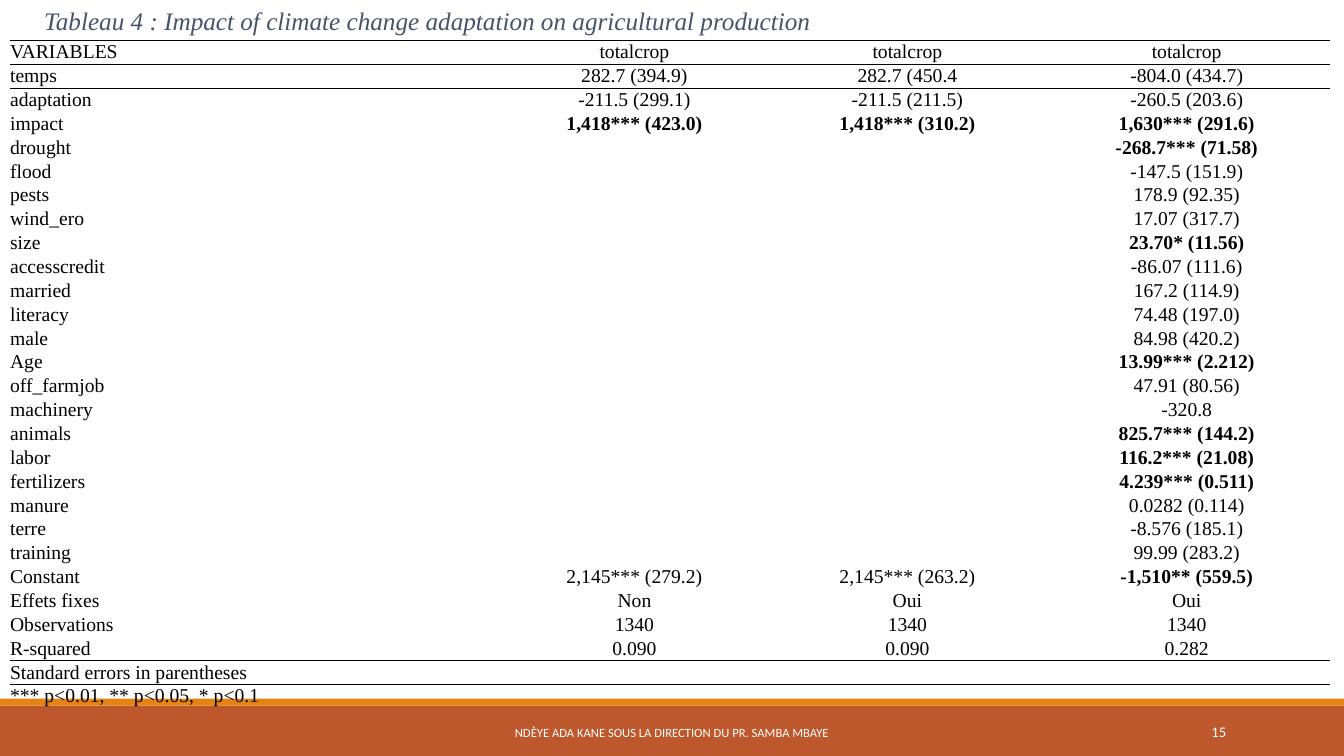
from lxml.etree import SubElement
from pptx import Presentation
from pptx.dml.color import RGBColor
from pptx.enum.shapes import MSO_SHAPE
from pptx.enum.text import MSO_ANCHOR, PP_ALIGN
from pptx.oxml import parse_xml
from pptx.oxml.ns import nsdecls, qn
from pptx.util import Pt

COLORS = {"text": "000000", "title": "44546A", "white": "FFFFFF",
          "footer": "BD582C", "accent": "E48312"}
SERIF, SANS = "Times New Roman", "Calibri"
NO_STYLE_NO_GRID = "{2D5ABB26-0587-4C30-8999-92F81FD0307C}"

BASIC_MODELS = [
    ("VARIABLES", "totalcrop", "totalcrop", "totalcrop"),
    ("temps", "282.7 (394.9)", "282.7 (450.4", "-804.0 (434.7)"),
    ("adaptation", "-211.5 (299.1)", "-211.5 (211.5)", "-260.5 (203.6)"),
    ("impact", "1,418*** (423.0)", "1,418*** (310.2)", "1,630*** (291.6)"),
]
CONTROLS = [
    ("drought", "-268.7*** (71.58)"),
    ("flood", "-147.5 (151.9)"),
    ("pests", "178.9 (92.35)"),
    ("wind_ero", "17.07 (317.7)"),
    ("size", "23.70* (11.56)"),
    ("accesscredit", "-86.07 (111.6)"),
    ("married", "167.2 (114.9)"),
    ("literacy", "74.48 (197.0)"),
    ("male", "84.98 (420.2)"),
    ("Age", "13.99*** (2.212)"),
    ("off_farmjob", "47.91 (80.56)"),
    ("machinery", "-320.8"),
    ("animals", "825.7*** (144.2)"),
    ("labor", "116.2*** (21.08)"),
    ("fertilizers", "4.239*** (0.511)"),
    ("manure", "0.0282 (0.114)"),
    ("terre", "-8.576 (185.1)"),
    ("training", "99.99 (283.2)"),
]
SUMMARY = [
    ("Constant", "2,145*** (279.2)", "2,145*** (263.2)", "-1,510** (559.5)"),
    ("Effets fixes", "Non", "Oui", "Oui"),
    ("Observations", "1340", "1340", "1340"),
    ("R-squared", "0.090", "0.090", "0.282"),
]
NOTES = ["Standard errors in parentheses", "*** p<0.01, ** p<0.05, * p<0.1"]
REGRESSION = (BASIC_MODELS
              + [(name, "", "", estimate) for name, estimate in CONTROLS]
              + SUMMARY
              + [(note, "", "", "") for note in NOTES])
LAST_RESULT = len(REGRESSION) - len(NOTES) - 1


def is_bold(row, column):
    """Significant estimates are bold, except the first two constants."""
    name, value = REGRESSION[row][0], REGRESSION[row][column]
    return column > 0 and "*" in value and (name != "Constant" or column == 3)


def rules_of(row):
    """Return the horizontal rules of a row as {edge tag: width in points}."""
    rules = {}
    if row <= 1:
        rules["a:lnT"] = 0.5
    if row == 0:
        rules["a:lnB"] = 0.5
    if row == LAST_RESULT:
        rules["a:lnB"] = 1
    if row == LAST_RESULT + 1:
        rules["a:lnT"] = 1
    return rules


class SlideBuilder:
    def __init__(self, slide):
        self.slide = slide

    def style(self, paragraph, size, font, color, align=PP_ALIGN.LEFT,
              bold=False, italic=False):
        paragraph.alignment = align
        paragraph.font.size = Pt(size)
        paragraph.font.name = font
        paragraph.font.bold = bold
        paragraph.font.italic = italic
        paragraph.font.color.rgb = RGBColor.from_string(COLORS[color])

    def bar(self, left, top, width, height, color):
        band = self.slide.shapes.add_shape(
            MSO_SHAPE.RECTANGLE, Pt(left), Pt(top), Pt(width), Pt(height))
        band.shadow.inherit = False
        band.fill.solid()
        band.fill.fore_color.rgb = RGBColor.from_string(COLORS[color])
        band.line.fill.background()

    def text(self, left, top, width, height, wording, anchor, **style):
        frame = self.slide.shapes.add_textbox(
            Pt(left), Pt(top), Pt(width), Pt(height)).text_frame
        frame.word_wrap = True
        frame.vertical_anchor = anchor
        frame.text = wording
        self.style(frame.paragraphs[0], **style)

    def table(self, left, top, widths, row_height, rows):
        grid = self.slide.shapes.add_table(
            len(rows), len(widths), Pt(left), Pt(top),
            Pt(sum(widths)), Pt(row_height * len(rows))).table
        grid.first_row = grid.horz_banding = False
        grid._tbl.tblPr.find(qn("a:tableStyleId")).text = NO_STYLE_NO_GRID
        for column, width in zip(grid.columns, widths):
            column.width = Pt(width)
        for r, values in enumerate(rows):
            grid.rows[r].height = Pt(row_height)
            for c, value in enumerate(values):
                self.cell(grid.cell(r, c), value, is_bold(r, c),
                          PP_ALIGN.CENTER if c else PP_ALIGN.LEFT, rules_of(r))

    def cell(self, cell, value, bold, align, rules):
        cell.margin_left = cell.margin_right = 0
        cell.margin_top = cell.margin_bottom = 0
        cell.vertical_anchor = MSO_ANCHOR.MIDDLE
        cell.fill.background()
        paragraph = cell.text_frame.paragraphs[0]
        if value:
            paragraph.text = value
        self.style(paragraph, 14, SERIF, "text", align, bold)
        if not value:
            # An empty cell takes its line height from the end mark.
            SubElement(paragraph._p, qn("a:endParaRPr"), sz="1400")
        for position, (edge, width) in enumerate(rules.items()):
            cell._tc.tcPr.insert(position, parse_xml(
                f'<{edge} {nsdecls("a")} w="{Pt(width)}"><a:solidFill>'
                f'<a:srgbClr val="{COLORS["text"]}"/></a:solidFill></{edge}>'))


def main():
    presentation = Presentation()
    presentation.slide_width, presentation.slide_height = Pt(960), Pt(540)
    page = SlideBuilder(
        presentation.slides.add_slide(presentation.slide_layouts[6]))

    page.bar(0, 504, 960, 36, "footer")
    page.bar(0, 499, 960, 5, "accent")
    page.text(290, 508.5, 379.5, 28.8,
              "NDÈYE ADA KANE SOUS LA DIRECTION DU PR. SAMBA MBAYE",
              MSO_ANCHOR.MIDDLE, size=9, font=SANS, color="white",
              align=PP_ALIGN.CENTER)
    page.text(780, 508.5, 103, 28.8, "15", MSO_ANCHOR.MIDDLE,
              size=10.5, font=SANS, color="white", align=PP_ALIGN.RIGHT)
    page.text(24.5, 0, 906.5, 29,
              "Tableau 4\u00a0: Impact of climate change adaptation on "
              "agricultural production",
              MSO_ANCHOR.TOP, size=18, font=SERIF, color="title", italic=True)
    page.table(7.2, 28.8, (348.5, 195, 195, 204), 17.05, REGRESSION)

    presentation.save("out.pptx")


if __name__ == "__main__":
    main()
